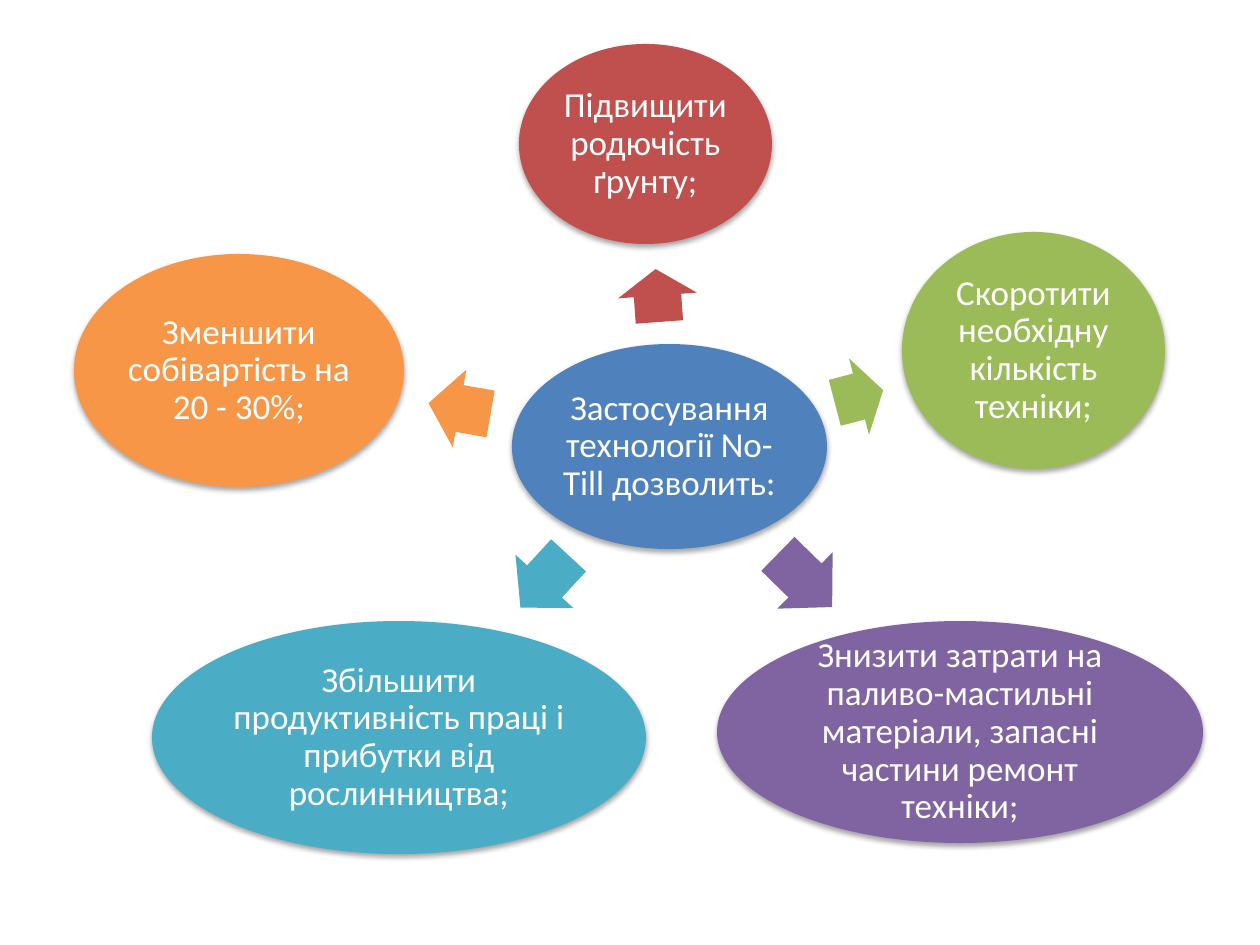
from dataclasses import dataclass

from lxml.etree import SubElement
from pptx import Presentation
from pptx.dml.color import RGBColor
from pptx.enum.shapes import MSO_SHAPE
from pptx.enum.text import MSO_ANCHOR, PP_ALIGN
from pptx.oxml.ns import qn
from pptx.util import Pt

PX = 914400 / 126
INSET = 4
ARROW_HEIGHT = 79

WHITE = RGBColor(0xFF, 0xFF, 0xFF)
BLUE = RGBColor(0x4F, 0x81, 0xBD)
RED = RGBColor(0xC0, 0x50, 0x4D)
GREEN = RGBColor(0x9B, 0xBB, 0x59)
PURPLE = RGBColor(0x80, 0x64, 0xA2)
TEAL = RGBColor(0x4B, 0xAC, 0xC6)
ORANGE = RGBColor(0xF7, 0x96, 0x46)


@dataclass
class Bubble:
    text: str
    color: RGBColor
    x: int
    y: int
    w: int
    h: int


@dataclass
class Arrow:
    x: int
    y: int
    w: int
    angle: float


HUB = Bubble("Застосування технології No-Till дозволить:", BLUE, 512, 344, 315, 205)
BENEFITS = [
    (Arrow(631, 256, 53, 265.8),
     Bubble("Підвищити родючість ґрунту;", RED, 519, 44, 253, 200)),
    (Arrow(834, 357, 50, 345.3),
     Bubble("Скоротити необхідну кількість техніки;", GREEN, 902, 232, 263, 237)),
    (Arrow(767, 541, 76, 44.4),
     Bubble("Знизити затрати на паливо-мастильні матеріали, запасні частини "
            "ремонт техніки;", PURPLE, 717, 621, 486, 222)),
    (Arrow(509, 542, 71, 132.7),
     Bubble("Збільшити продуктивність праці і прибутки від рослинництва;",
            TEAL, 152, 621, 494, 233)),
    (Arrow(428, 369, 63, 189.9),
     Bubble("Зменшити собівартість на 20 - 30%;", ORANGE, 74, 254, 330, 233)),
]


def emu(px: int) -> int:
    return round(px * PX)


def add_filled(slide, kind, x: int, y: int, w: int, h: int, color: RGBColor):
    sp = slide.shapes.add_shape(kind, emu(x), emu(y), emu(w), emu(h))
    sp.shadow.inherit = False
    sp.fill.solid()
    sp.fill.fore_color.rgb = color
    sp.line.fill.background()
    return sp


def add_shadow(sp) -> None:
    """Give the shape a soft shadow straight below it."""
    effects = sp.element.spPr.find(qn("a:effectLst"))
    shadow = SubElement(effects, qn("a:outerShdw"), blurRad=str(Pt(3.1)),
                        dist=str(Pt(1.8)), dir="5400000", rotWithShape="0")
    color = SubElement(shadow, qn("a:srgbClr"), val="000000")
    SubElement(color, qn("a:alpha"), val="35000")


def add_bubble(slide, bubble: Bubble) -> None:
    sp = add_filled(slide, MSO_SHAPE.OVAL, bubble.x, bubble.y, bubble.w, bubble.h,
                    bubble.color)
    add_shadow(sp)
    tf = sp.text_frame
    tf.word_wrap = True
    tf.vertical_anchor = MSO_ANCHOR.MIDDLE
    tf.margin_left = tf.margin_right = tf.margin_top = tf.margin_bottom = emu(INSET)
    tf.text = bubble.text
    p = tf.paragraphs[0]
    p.alignment = PP_ALIGN.CENTER
    p.line_spacing = 0.9
    font = p.runs[0].font
    font.name = "Calibri"
    font.size = Pt(20)
    font.color.rgb = WHITE


def add_arrow(slide, arrow: Arrow, color: RGBColor) -> None:
    sp = add_filled(slide, MSO_SHAPE.RIGHT_ARROW, arrow.x, arrow.y, arrow.w,
                    ARROW_HEIGHT, color)
    sp.adjustments[0] = 0.6
    sp.adjustments[1] = 0.5
    sp.rotation = arrow.angle


def main() -> None:
    prs = Presentation()
    prs.slide_width, prs.slide_height = emu(1260), emu(945)
    slide = prs.slides.add_slide(prs.slide_layouts[6])
    add_bubble(slide, HUB)
    for arrow, bubble in BENEFITS:
        add_arrow(slide, arrow, bubble.color)
        add_bubble(slide, bubble)
    prs.save("out.pptx")


if __name__ == "__main__":
    main()
